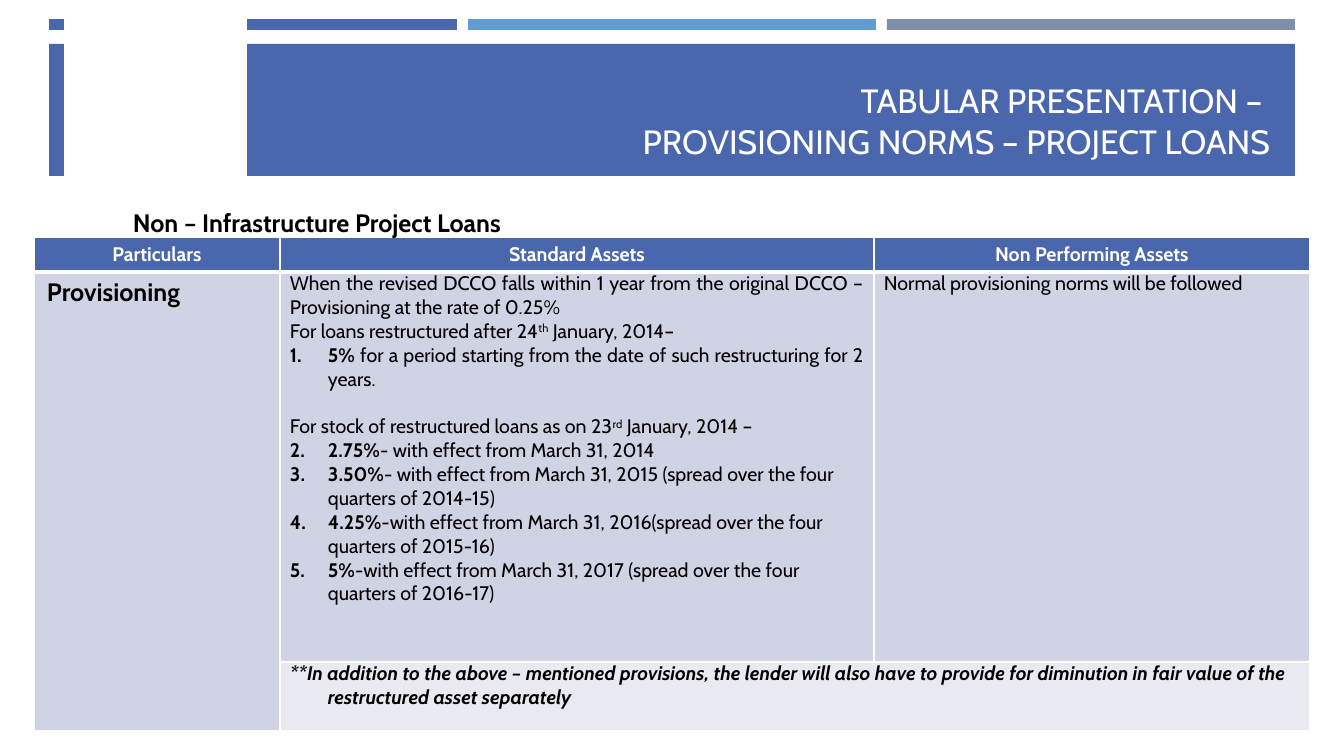
from dataclasses import dataclass

from lxml import etree
from pptx import Presentation
from pptx.dml.color import RGBColor
from pptx.enum.shapes import MSO_SHAPE
from pptx.enum.text import MSO_ANCHOR, PP_ALIGN
from pptx.oxml.ns import qn
from pptx.util import Emu, Pt

RECTANGLE = MSO_SHAPE.RECTANGLE
TOP, MIDDLE, BOTTOM = MSO_ANCHOR.TOP, MSO_ANCHOR.MIDDLE, MSO_ANCHOR.BOTTOM
LEFT, CENTER, RIGHT, JUSTIFY = PP_ALIGN.LEFT, PP_ALIGN.CENTER, PP_ALIGN.RIGHT, PP_ALIGN.JUSTIFY

TITLE = "TABULAR PRESENTATION – \vPROVISIONING NORMS – PROJECT LOANS"
SUBTITLE = "Non – Infrastructure Project Loans"
HEADERS = ["Particulars", "Standard Assets", "Non Performing Assets"]
ROW_LABEL = "Provisioning"
STANDARD_ASSETS = [
    ("text", [("When the revised DCCO falls within 1 year from the original DCCO – "
               "Provisioning at the rate of 0.25%", "")]),
    ("text", [("For loans restructured after 24", ""), ("th", "super"), (" January, 2014–", "")]),
    ("justified item", [("5%", "bold"), (" for a period starting from the date of such "
                                         "restructuring for 2 years.", "")]),
    ("new section", [("For stock of restructured loans as on 23", ""), ("rd", "super"),
                     (" January, 2014 –", "")]),
    ("item", [("2.75%", "bold"), ("- with effect from March 31, 2014", "")]),
    ("item", [("3.50%", "bold"), ("- with effect from March 31, 2015 (spread over the four "
                                  "quarters of 2014-15)", "")]),
    ("item", [("4.25%", "bold"), ("-with effect from March 31, 2016(spread over the four "
                                  "quarters of 2015-16)", "")]),
    ("item", [("5%", "bold"), ("-with effect from March 31, 2017 (spread over the four "
                               "quarters of 2016-17)", "")]),
]
NON_PERFORMING = [("text", [("Normal provisioning norms will be followed", "")])]
FOOTNOTE = [("note", [("**In addition to the above – mentioned provisions, the lender will also "
                       "have to provide for diminution in fair value of the restructured asset "
                       "separately", "bold italic")])]


@dataclass(frozen=True)
class Theme:
    font: str = "Cabin"
    blue: str = "4A66AC"
    sky: str = "629DD1"
    slate: str = "7F8FA9"
    white: str = "FFFFFF"
    black: str = "000000"
    body_fill: str = "D0D3E3"
    note_fill: str = "E9EAF1"
    title_size: int = 24
    label_size: int = 18
    body_size: int = 14
    line_height: int = 17
    thin: int = 1
    thick: int = 3


THEME = Theme()
PAGE_WIDTH, PAGE_HEIGHT = 1344, 756
BAR_LEFT, BAR_TOP, BAR_WIDTH, BAR_HEIGHT, BAR_STEP = 49, 19, 408, 11, 419
BAND = (49, 44, 1246, 132)
CUTOUT = (64, 0, 183, 193)
TITLE_BOX = (567, 54, 713, 112)
SUBTITLE_BOX = (123, 202, 661, 40)
TABLE_LEFT, TABLE_TOP = 34, 237
COLUMNS, ROWS = [246, 594, 436], [35, 390, 69]
WIDE, HEADER_INSET, BODY_INSET = (13, 5), (3, 0), (10, 0)
HANGING = 38


def px(length):
    return Emu(round(length * 914400 / 100.8))


def style(para, size, color, align=LEFT, bold=None):
    para.alignment = align
    font = para.font
    font.name, font.size, font.bold = THEME.font, Pt(size), bold
    font.color.rgb = RGBColor.from_string(color)


def add_bar(page, frame, color):
    bar = page.shapes.add_shape(RECTANGLE, *map(px, frame))
    bar.shadow.inherit = False
    bar.fill.solid()
    bar.fill.fore_color.rgb = RGBColor.from_string(color)
    bar.line.fill.background()


def add_label(page, frame, text, anchor, *look):
    box = page.shapes.add_textbox(*map(px, frame))
    box.text_frame.word_wrap = True
    box.text_frame.vertical_anchor = anchor
    para = box.text_frame.paragraphs[0]
    para.text = text
    style(para, *look)


def prepare_cell(cell, color, inset, anchor=TOP):
    cell.margin_left = cell.margin_right = px(inset[0])
    cell.margin_top = cell.margin_bottom = px(inset[1])
    cell.vertical_anchor = anchor
    cell.fill.solid()
    cell.fill.fore_color.rgb = RGBColor.from_string(color)


def add_borders(cell, row):
    properties = cell._tc.get_or_add_tcPr()
    for index, side in enumerate("LRTB"):
        heavy = (row, side) in ((0, "B"), (1, "T"))
        line = etree.Element(qn(f"a:ln{side}"), w=str(Pt(THEME.thick if heavy else THEME.thin)))
        solid = etree.SubElement(line, qn("a:solidFill"))
        etree.SubElement(solid, qn("a:srgbClr"), val=THEME.white)
        properties.insert(index, line)


def indent(para, numbered):
    properties = para._p.get_or_add_pPr()
    properties.set("marL", str(px(HANGING)))
    properties.set("indent", str(-px(HANGING)))
    if numbered:
        bullet = etree.Element(qn("a:buAutoNum"), type="arabicPeriod")
        properties.insert_element_before(bullet, "a:tabLst", "a:defRPr", "a:extLst")


def write_body(cell, paragraphs):
    frame = cell.text_frame
    for index, (kind, runs) in enumerate(paragraphs):
        para = frame.add_paragraph() if index else frame.paragraphs[0]
        style(para, THEME.body_size, THEME.black, LEFT if kind in ("item", "note") else JUSTIFY)
        if kind == "new section":
            para.space_before = Pt(THEME.line_height)
        if kind in ("item", "justified item", "note"):
            indent(para, kind != "note")
        for text, emphasis in runs:
            span = para.add_run()
            span.text = text
            span.font.bold = "bold" in emphasis
            span.font.italic = "italic" in emphasis
            if emphasis == "super":
                span.font._element.set("baseline", "30000")


def add_norms_table(page):
    table = page.shapes.add_table(len(ROWS), len(COLUMNS), px(TABLE_LEFT), px(TABLE_TOP),
                                  px(sum(COLUMNS)), px(sum(ROWS))).table
    table.horz_banding = False
    for column, width in zip(table.columns, COLUMNS):
        column.width = px(width)
    for row, height in zip(table.rows, ROWS):
        row.height = px(height)
    table.cell(1, 0).merge(table.cell(2, 0))
    table.cell(2, 1).merge(table.cell(2, 2))

    fills = [THEME.blue, THEME.body_fill, THEME.note_fill]
    for row, fill in enumerate(fills):
        for column in range(len(COLUMNS)):
            cell = table.cell(row, column)
            inset = WIDE if column == 0 else BODY_INSET if row else HEADER_INSET
            prepare_cell(cell, fill, inset, TOP if row else MIDDLE)
            add_borders(cell, row)

    for column, header in enumerate(HEADERS):
        para = table.cell(0, column).text_frame.paragraphs[0]
        para.text = header
        style(para, THEME.body_size, THEME.white, CENTER, True)
    label = table.cell(1, 0).text_frame.paragraphs[0]
    label.text = ROW_LABEL
    style(label, THEME.label_size, THEME.black, LEFT, True)
    write_body(table.cell(1, 1), STANDARD_ASSETS)
    write_body(table.cell(1, 2), NON_PERFORMING)
    write_body(table.cell(2, 1), FOOTNOTE)


def main():
    deck = Presentation()
    deck.slide_width, deck.slide_height = px(PAGE_WIDTH), px(PAGE_HEIGHT)
    page = deck.slides.add_slide(deck.slide_layouts[6])
    for index, color in enumerate((THEME.blue, THEME.sky, THEME.slate)):
        add_bar(page, (BAR_LEFT + index * BAR_STEP, BAR_TOP, BAR_WIDTH, BAR_HEIGHT), color)
    add_bar(page, BAND, THEME.blue)
    add_bar(page, CUTOUT, THEME.white)
    add_label(page, TITLE_BOX, TITLE, BOTTOM, THEME.title_size, THEME.white, RIGHT)
    add_norms_table(page)
    add_label(page, SUBTITLE_BOX, SUBTITLE, TOP, THEME.label_size, THEME.black, LEFT, True)
    deck.save("out.pptx")


if __name__ == "__main__":
    main()
